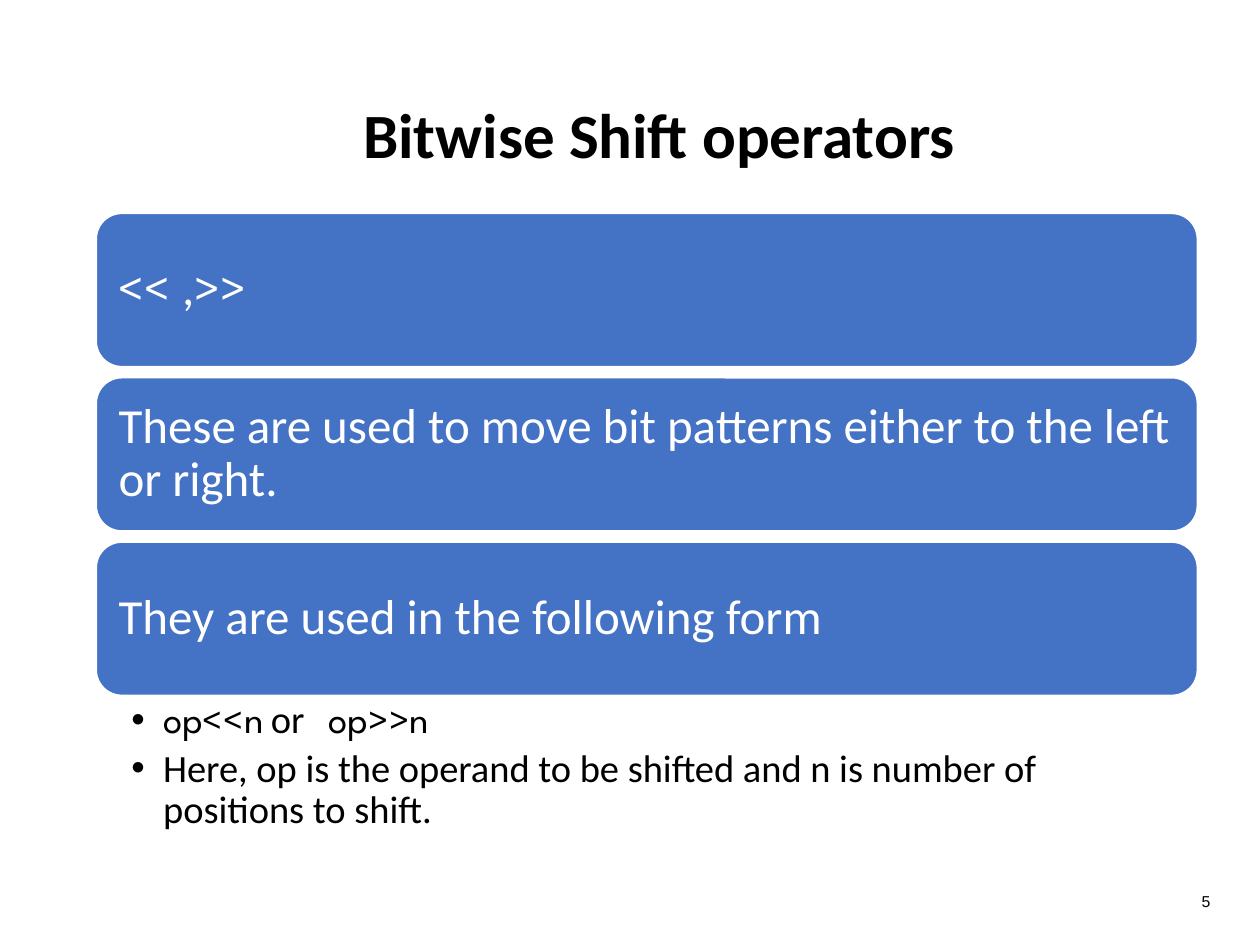
from lxml.etree import SubElement
from pptx import Presentation
from pptx.dml.color import RGBColor
from pptx.enum.shapes import MSO_SHAPE
from pptx.enum.text import MSO_ANCHOR, PP_ALIGN
from pptx.oxml.ns import qn
from pptx.util import Cm, Pt

BLACK = RGBColor(0x00, 0x00, 0x00)
WHITE = RGBColor(0xFF, 0xFF, 0xFF)
BLUE = RGBColor(0x44, 0x72, 0xC4)
BODY_FONT = "Calibri"
CODE_FONT = "League Spartan"


def write_text(para, spans, size, color=BLACK, bold=False, align=PP_ALIGN.LEFT, spacing=0.9):
    """Fill a paragraph with (text, font name) spans in one format."""
    para.alignment = align
    para.line_spacing = spacing
    for text, font_name in spans:
        span = para.add_run()
        span.text = text
        span.font.name = font_name
        span.font.size = Pt(size)
        span.font.bold = bold
        span.font.color.rgb = color


def set_frame(frame, anchor, side=0.25, right=None, edge=0.13):
    """Set wrapping, anchor and insets in centimetres."""
    frame.word_wrap = True
    frame.vertical_anchor = anchor
    frame.margin_left = Cm(side)
    frame.margin_right = Cm(side if right is None else right)
    frame.margin_top = frame.margin_bottom = Cm(edge)


def add_line(page, left, top, width, height, spans, **style):
    """Place one vertically centred line of text."""
    frame = page.shapes.add_textbox(Cm(left), Cm(top), Cm(width), Cm(height)).text_frame
    set_frame(frame, MSO_ANCHOR.MIDDLE)
    write_text(frame.paragraphs[0], spans, **style)


def add_panels(page, left, top, width, height, panels, gap=0.22):
    """Stack equal rounded panels inside the given box."""
    panel_height = (height - gap * (len(panels) - 1)) / len(panels)
    for index, spans in enumerate(panels):
        panel_top = top + index * (panel_height + gap)
        panel = page.shapes.add_shape(
            MSO_SHAPE.ROUNDED_RECTANGLE, Cm(left), Cm(panel_top), Cm(width), Cm(panel_height))
        panel.shadow.inherit = False
        panel.fill.solid()
        panel.fill.fore_color.rgb = BLUE
        panel.line.color.rgb = WHITE
        panel.line.width = Pt(1)
        set_frame(panel.text_frame, MSO_ANCHOR.MIDDLE, side=0.3, edge=0.3)
        write_text(panel.text_frame.paragraphs[0], spans, size=28, color=WHITE)


def set_bullet(para, indent, tabs):
    """Give a paragraph a hanging bullet and tab stops."""
    properties = para._p.get_or_add_pPr()
    properties.set("marL", str(Cm(indent)))
    properties.set("indent", str(-Cm(indent)))
    SubElement(properties, qn("a:buFont"), typeface="Arial")
    SubElement(properties, qn("a:buChar"), char="•")
    if tabs:
        stops = SubElement(properties, qn("a:tabLst"))
        for position in tabs:
            SubElement(stops, qn("a:tab"), pos=str(Cm(position)), algn="l")


def add_bullets(page, left, top, width, height, items):
    """Place a bulleted list of (spans, tab stops) items."""
    frame = page.shapes.add_textbox(Cm(left), Cm(top), Cm(width), Cm(height)).text_frame
    set_frame(frame, MSO_ANCHOR.TOP, side=0.71, right=0.56, edge=0.1)
    for index, (spans, tabs) in enumerate(items):
        para = frame.add_paragraph() if index else frame.paragraphs[0]
        para.level = 1
        set_bullet(para, 0.64, tabs)
        write_text(para, spans, size=22)
        para.space_after = Pt(4)


def main():
    """Build the slide on shift operators."""
    deck = Presentation()
    deck.slide_width, deck.slide_height = Cm(25.4), Cm(19.05)
    page = deck.slides.add_slide(deck.slide_layouts[6])
    add_line(page, 5.82, 2.08, 14.94, 1.42, [("Bitwise Shift operators", BODY_FONT)],
             size=36, bold=True, align=PP_ALIGN.CENTER)
    add_line(page, 23.65, 17.65, 1, 1.02, [("5", "Arial")],
             size=9, align=PP_ALIGN.RIGHT, spacing=1.0)
    add_panels(page, 1.94, 4.3, 22.2, 9.72, [
        [("<<", CODE_FONT), (" ,", BODY_FONT), (">>", CODE_FONT)],
        [("These are used to move bit patterns either to the left or right.", BODY_FONT)],
        [("They are used in the following form", BODY_FONT)],
    ])
    add_bullets(page, 1.94, 14.02, 22.2, 2.97, [
        ([("op<<n\t", CODE_FONT), ("or\t", BODY_FONT), ("op>>n", CODE_FONT)], (2.81, 3.98)),
        ([("Here, op is the operand to be shifted and n is number of positions to shift.",
           BODY_FONT)], ()),
    ])
    deck.save("out.pptx")


if __name__ == "__main__":
    main()
